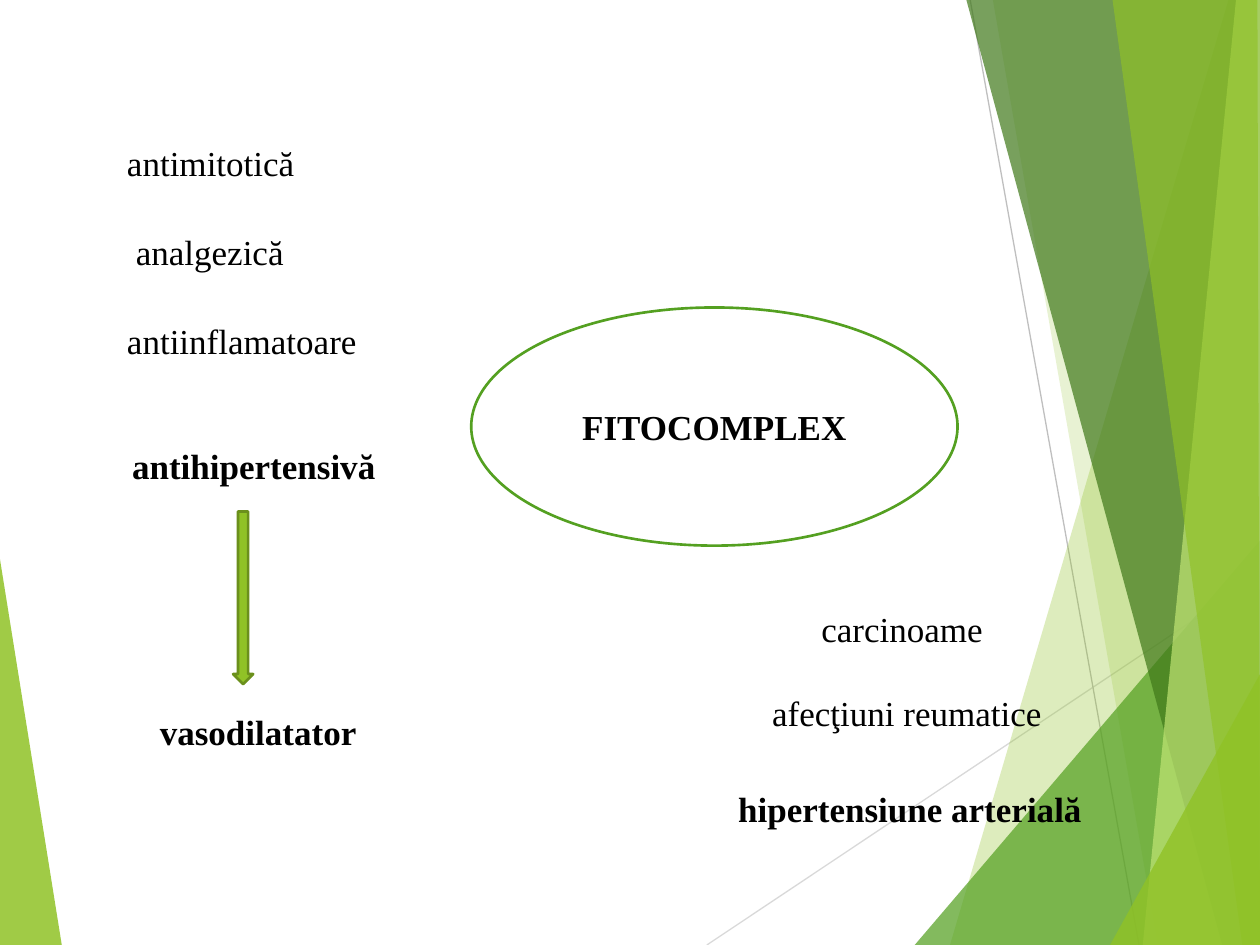
from lxml.etree import SubElement
from pptx import Presentation
from pptx.dml.color import RGBColor
from pptx.enum.shapes import MSO_CONNECTOR, MSO_SHAPE
from pptx.enum.text import MSO_ANCHOR, MSO_AUTO_SIZE, PP_ALIGN
from pptx.oxml.ns import qn
from pptx.util import Inches, Pt

# Grid of 100 columns by 75 rows; boxes are left, top, width, height
WIDTH, HEIGHT = Inches(10), Inches(7.5)
COLUMN, ROW = WIDTH / 100, HEIGHT / 75
FONT = "Times New Roman"
TEXT_HEIGHT = 4.4

# Facets of the background: colour, opacity in percent, corners
LEFT_FACET = ("90C226", 85, [(0, 44.4), (4.9, 75), (0, 75)])
RIGHT_FACETS = [
    ("90C226", 30, [(97.5, 0), (75.4, 75), (100, 75), (100, 0)]),
    ("90C226", 20, [(78.8, 0), (91.9, 75), (100, 75), (100, 0)]),
    ("54A021", 72, [(72.6, 75), (100, 42.9), (100, 75)]),
    ("3F7819", 70, [(76.7, 0), (97, 75), (100, 75), (100, 0)]),
    ("C0E474", 70, [(98.1, 0), (90.7, 75), (100, 75), (100, 0)]),
    ("90C226", 65, [(88.3, 0), (98.6, 75), (100, 75), (99.8, 0)]),
    ("90C226", 80, [(88.1, 75), (100, 53.5), (100, 75)]),
]
RAYS = [("D9D9D9", (56.1, 75), (100, 45.7)), ("BFBFBF", (77, 0), (90.4, 75))]

# Labels: text, column and row within the region, width, bold
EFFECTS = [
    ("antimitotică", 0, 0, 15.4, False),
    ("analgezică", 0.7, 7.1, 13.8, False),
    ("antiinflamatoare", 0, 14.2, 20.3, False),
    ("antihipertensivă", 0.4, 24.1, 21.5, True),
    ("vasodilatator", 2.6, 45.2, 17.7, True),
]
USES = [
    ("carcinoame", 6.6, 0, 17.6, False),
    ("afecţiuni reumatice", 2.7, 6.7, 23.5, False),
    ("hipertensiune arterială", 0, 14.3, 29.5, True),
]


def color(value):
    return RGBColor.from_string(value)


def place(column, row):
    return round(column * COLUMN), round(row * ROW)


def add_facet(slide, fill, opacity, corners):
    points = [place(*corner) for corner in corners]
    builder = slide.shapes.build_freeform(*points[0])
    builder.add_line_segments(points[1:], close=True)
    shape = builder.convert_to_shape()
    shape.shadow.inherit = False
    shape.fill.solid()
    shape.fill.fore_color.rgb = color(fill)
    shape.line.fill.background()
    # Transparency
    rgb = shape.fill._xPr.find(qn("a:solidFill")).find(qn("a:srgbClr"))
    SubElement(rgb, qn("a:alpha"), val=str(opacity * 1000))


def add_ray(slide, line, start, end):
    connector = slide.shapes.add_connector(
        MSO_CONNECTOR.STRAIGHT, *place(*start), *place(*end))
    connector.line.color.rgb = color(line)
    connector.line.width = Pt(0.75)
    SubElement(connector._element.spPr, qn("a:effectLst"))


def add_outlined(slide, kind, box, fill, line):
    shape = slide.shapes.add_shape(kind, *place(*box[:2]), *place(*box[2:]))
    shape.shadow.inherit = False
    shape.fill.solid()
    shape.fill.fore_color.rgb = color(fill)
    shape.line.color.rgb = color(line)
    shape.line.width = Pt(1.5)
    return shape


def write(frame, text, bold):
    paragraph = frame.paragraphs[0]
    paragraph.text = text
    paragraph.font.name = FONT
    paragraph.font.size = Pt(20)
    paragraph.font.bold = bold
    paragraph.font.color.rgb = color("000000")
    return paragraph


def draw_background(slide):
    add_facet(slide, *LEFT_FACET)
    for ray in RAYS:
        add_ray(slide, *ray)
    for facet in RIGHT_FACETS:
        add_facet(slide, *facet)


def draw_center(slide, box):
    ellipse = add_outlined(slide, MSO_SHAPE.OVAL, box, "FFFFFF", "54A021")
    ellipse.text_frame.vertical_anchor = MSO_ANCHOR.MIDDLE
    write(ellipse.text_frame, "FITOCOMPLEX", True).alignment = PP_ALIGN.CENTER


def draw_labels(slide, left, top, labels):
    for text, column, row, width, bold in labels:
        textbox = slide.shapes.add_textbox(
            *place(left + column, top + row), *place(width, TEXT_HEIGHT))
        textbox.text_frame.word_wrap = False
        textbox.text_frame.auto_size = MSO_AUTO_SIZE.SHAPE_TO_FIT_TEXT
        write(textbox.text_frame, text, bold)


def draw_effects(slide, left, top):
    draw_labels(slide, left, top, EFFECTS)
    # Arrow from the effect to its mechanism
    arrow_box = (left + 9.4, top + 29.9, 1.6, 13.7)
    add_outlined(slide, MSO_SHAPE.DOWN_ARROW, arrow_box, "90C226", "6B901C")


def main():
    presentation = Presentation()
    presentation.slide_width, presentation.slide_height = WIDTH, HEIGHT
    slide = presentation.slides.add_slide(presentation.slide_layouts[6])
    draw_background(slide)
    draw_center(slide, (37.4, 24.4, 38.6, 18.9))
    draw_effects(slide, 9.1, 10.7)
    draw_labels(slide, 57.6, 47.7, USES)
    presentation.save("out.pptx")


if __name__ == "__main__":
    main()
